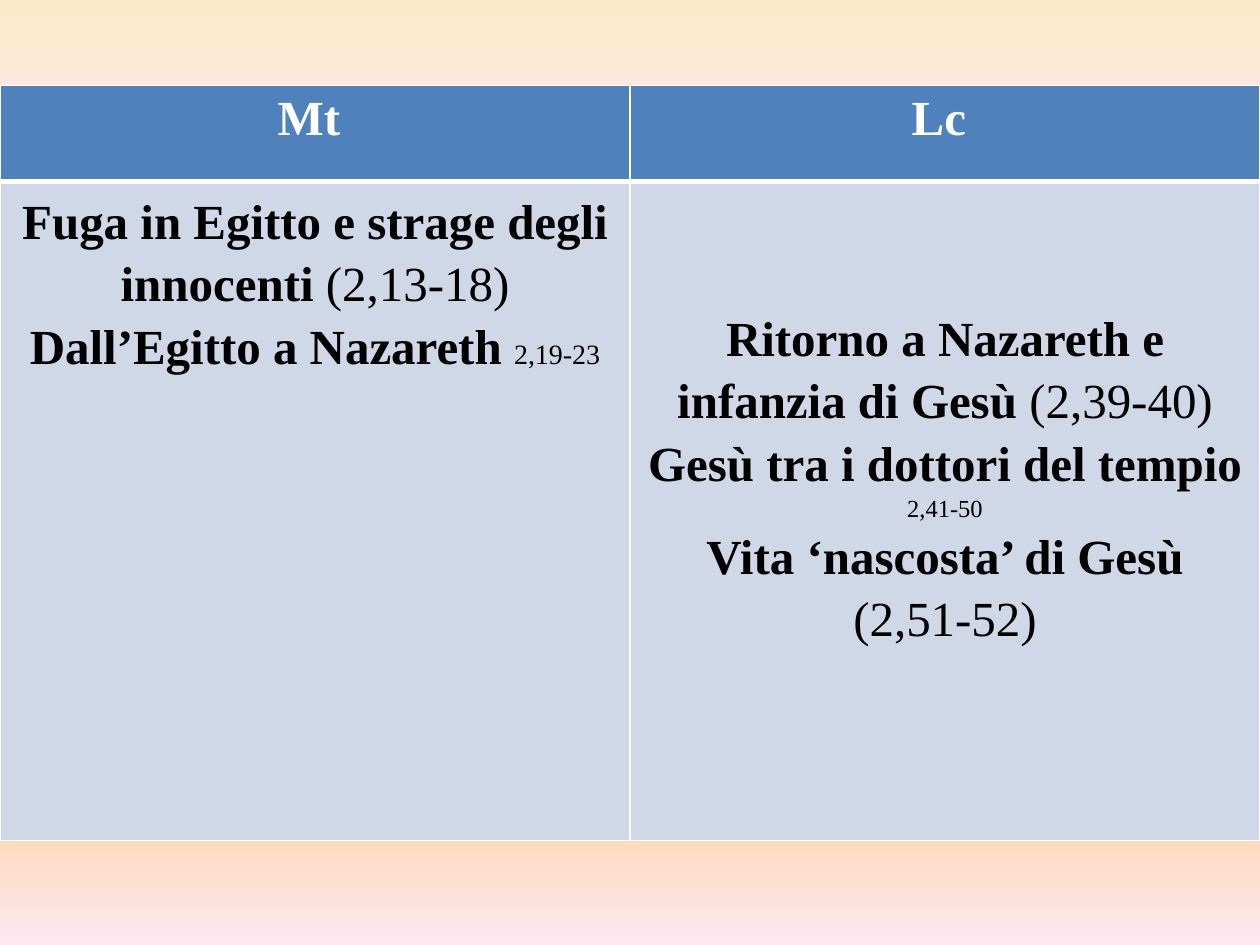
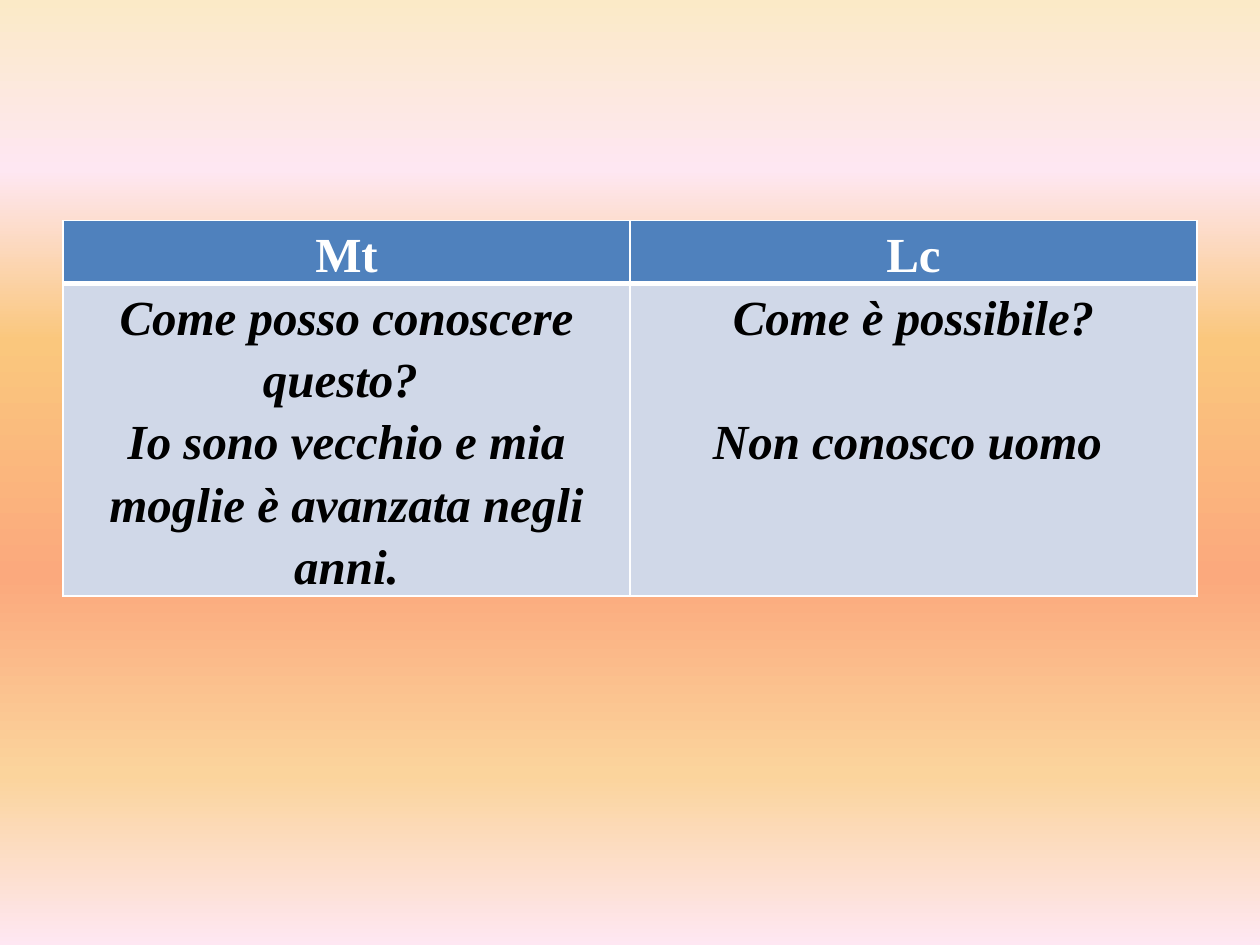
from lxml import etree
from pptx import Presentation
from pptx.dml.color import RGBColor
from pptx.enum.text import PP_ALIGN
from pptx.oxml.ns import qn
from pptx.util import Inches, Pt

CENTER = PP_ALIGN.CENTER
WHITE = RGBColor(0xFF, 0xFF, 0xFF)
BLACK = RGBColor(0x00, 0x00, 0x00)
HEADER_BLUE = RGBColor(0x4F, 0x81, 0xBD)
BODY_BLUE = RGBColor(0xD0, 0xD8, 0xE8)
SUNSET = [
    (0, RGBColor(0xFB, 0xEA, 0xC7)),
    (18, RGBColor(0xFE, 0xE7, 0xF2)),
    (36, RGBColor(0xFA, 0xC7, 0x7D)),
    (61, RGBColor(0xFB, 0xA9, 0x7D)),
    (82, RGBColor(0xFB, 0xD4, 0x9C)),
    (100, RGBColor(0xFE, 0xE7, 0xF2)),
]
FONT = "Times New Roman"
SIZE = 28
THIN, THICK = Pt(1), Pt(3)


def add_run(paragraph, text, size=SIZE, color=BLACK, bold=True, italic=False):
    run = paragraph.add_run()
    run.text = text
    run.font.name = FONT
    run.font.size = Pt(size)
    run.font.color.rgb = color
    run.font.bold = bold
    run.font.italic = italic


def add_border(cell, side, width):
    line = etree.SubElement(cell._tc.get_or_add_tcPr(), qn(f"a:ln{side}"), w=str(width))
    solid = etree.SubElement(line, qn("a:solidFill"))
    etree.SubElement(solid, qn("a:srgbClr"), val=str(WHITE))


# Each passage: title, reference, reference size, space before in points
comparisons = [
    dict(
        left=0, top=0.68, width=10, rows=(0.76, 5.23), inset=(0.1, 0.05),
        header_spacing=1.0, italic=False, headers=("Mt ", "Lc "), body_drops=(0, 0.93),
        passages=(
            [("Fuga in Egitto e strage degli innocenti ", "(2,13-18)", SIZE, 0),
             ("Dall’Egitto a Nazareth ", "2,19-23", 16, 0)],
            [("Ritorno a Nazareth e infanzia di Gesù ", "(2,39-40)", SIZE, 0),
             ("Gesù tra i dottori del tempio ", "2,41-50", 14, 0),
             ("Vita ‘nascosta’ di Gesù ", "(2,51-52)", SIZE, 0)],
        ),
    ),
    dict(
        left=0.5, top=1.75, width=9, rows=(0.5, 2.48), inset=(0.07, 0),
        header_spacing=1.15, italic=True, headers=("Mt", "Lc"), body_drops=(0, 0),
        passages=(
            [("Come posso conoscere questo? ", "", SIZE, 0),
             ("Io sono vecchio e mia moglie è avanzata negli anni.", "", SIZE, 0)],
            [("Come è possibile?", "", SIZE, 0),
             ("Non conosco uomo ", "", SIZE, 35.6)],
        ),
    ),
]

deck = Presentation()
deck.slide_width, deck.slide_height = Inches(10), Inches(7.5)

for comparison in comparisons:
    slide = deck.slides.add_slide(deck.slide_layouts[6])

    # Sunset background, from top to bottom
    backdrop = slide.background.fill
    backdrop.gradient()
    backdrop.gradient_angle = 270
    stops = slide.element.find(".//" + qn("a:gsLst"))
    for stop in list(stops):
        stops.remove(stop)
    for position, color in SUNSET:
        stop = etree.SubElement(stops, qn("a:gs"), pos=str(position * 1000))
        etree.SubElement(stop, qn("a:srgbClr"), val=str(color))

    # Table of the two Gospels
    gospels = slide.shapes.add_table(
        2, 2, Inches(comparison["left"]), Inches(comparison["top"]),
        Inches(comparison["width"]), Inches(sum(comparison["rows"]))).table
    gospels.horz_banding = False
    for row, height in zip(gospels.rows, comparison["rows"]):
        row.height = Inches(height)

    side_inset, top_inset = comparison["inset"]
    for column in range(2):
        header, body = gospels.cell(0, column), gospels.cell(1, column)

        # Borders, fills and margins
        for cell, color, top, bottom, drop in (
                (header, HEADER_BLUE, THIN, THICK, 0),
                (body, BODY_BLUE, THICK, THIN, comparison["body_drops"][column])):
            for side, width in (("L", THIN), ("R", THIN), ("T", top), ("B", bottom)):
                add_border(cell, side, width)
            cell.fill.solid()
            cell.fill.fore_color.rgb = color
            cell.margin_left = cell.margin_right = Inches(side_inset)
            cell.margin_top = Inches(top_inset + drop)
            cell.margin_bottom = Inches(top_inset)

        # Gospel name
        heading = header.text_frame.paragraphs[0]
        heading.alignment = CENTER
        heading.line_spacing = comparison["header_spacing"]
        add_run(heading, comparison["headers"][column], color=WHITE)

        # Passages
        for index, (title, reference, size, gap) in enumerate(comparison["passages"][column]):
            frame = body.text_frame
            passage = frame.add_paragraph() if index else frame.paragraphs[0]
            passage.alignment = CENTER
            passage.line_spacing = 1.15
            passage.space_before = Pt(gap)
            add_run(passage, title, italic=comparison["italic"])
            if reference:
                add_run(passage, reference, size=size, bold=False)

deck.save("out.pptx")
